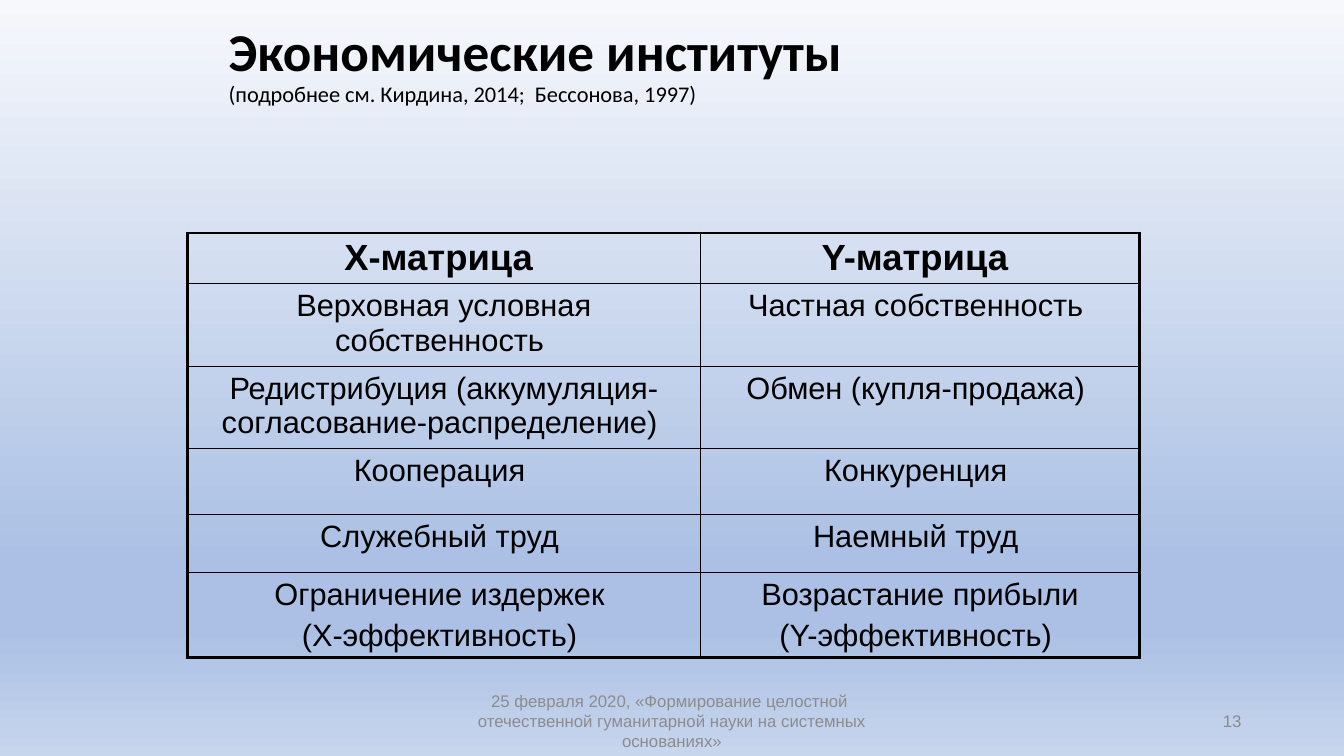
from lxml.etree import SubElement
from pptx import Presentation
from pptx.dml.color import RGBColor
from pptx.enum.text import MSO_ANCHOR, PP_ALIGN
from pptx.oxml.ns import qn
from pptx.util import Cm, Pt

COLORS = {"text": "000000", "footer": "8C8C8C", "line": "000000"}
BACKGROUND = [(0, "F6F8FC"), (74, "ABC0E4"), (83, "ABC0E4"), (100, "C7D5ED")]
THIN, THICK = Pt(1), Pt(2.25)

COLUMN_WIDTHS = [12.93, 11.07]
ROWS = [  # height in cm, left cell, right cell
    (1.26, "Х-матрица ", "Y-матрица "),
    (2.08, "Верховная условная собственность ", "Частная собственность "),
    (2.08, "Редистрибуция (аккумуляция-согласование-распределение) ",
     "Обмен (купля-продажа) "),
    (1.65, "Кооперация ", "Конкуренция "),
    (1.47, "Служебный труд ", "Наемный труд "),
    (2.08, "Ограничение издержек \n(Х-эффективность) ",
     "Возрастание прибыли\n(Y-эффективность) "),
]


def style_font(font, name, size, color, bold=False):
    font.name = name
    font.size = Pt(size)
    font.bold = bold
    font.color.rgb = RGBColor.from_string(COLORS[color])


def paint_background(s):
    fill = s.background.fill
    fill.gradient()
    fill.gradient_angle = 270
    stops = s._element.xpath(".//a:gsLst")[0]
    for old in list(stops):
        stops.remove(old)
    for percent, color in BACKGROUND:
        stop = SubElement(stops, qn("a:gs"), pos=str(percent * 1000))
        SubElement(stop, qn("a:srgbClr"), val=color)


def fill_title(s, left, top, width, height):
    title = s.shapes.title
    title.left, title.top, title.width, title.height = left, top, width, height
    tf = title.text_frame
    tf.vertical_anchor = MSO_ANCHOR.MIDDLE
    p = tf.paragraphs[0]
    p.alignment = PP_ALIGN.LEFT
    p.line_spacing = 0.9
    r = p.add_run()
    r.text = "Экономические институты"
    style_font(r.font, "Calibri", 38, "text", bold=True)
    p.add_line_break()
    r = p.add_run()
    r.text = "(подробнее см. Кирдина, 2014;  Бессонова, 1997)"
    style_font(r.font, "Calibri", 16, "text")


def set_borders(cell, **widths):
    """Draw solid borders; keys are the sides L, R, T and B."""
    tc_pr = cell._tc.get_or_add_tcPr()
    for side, width in widths.items():
        ln = SubElement(tc_pr, qn(f"a:ln{side}"), w=str(int(width)))
        color = SubElement(SubElement(ln, qn("a:solidFill")), qn("a:srgbClr"))
        color.set("val", COLORS["line"])


def add_matrix_table(s, left, top):
    last_row, last_col = len(ROWS) - 1, len(COLUMN_WIDTHS) - 1
    width = Cm(sum(COLUMN_WIDTHS))
    height = Cm(sum(row[0] for row in ROWS))
    table = s.shapes.add_table(len(ROWS), len(COLUMN_WIDTHS),
                               left, top, width, height).table
    table.first_row = table.horz_banding = False
    for column, column_width in zip(table.columns, COLUMN_WIDTHS):
        column.width = Cm(column_width)
    for i, (row_height, *texts) in enumerate(ROWS):
        table.rows[i].height = Cm(row_height)
        for j, text in enumerate(texts):
            cell = table.cell(i, j)
            set_borders(cell,
                        L=THICK if j == 0 else THIN,
                        R=THICK if j == last_col else THIN,
                        T=THICK if i == 0 else THIN,
                        B=THICK if i == last_row else THIN)
            cell.fill.background()
            cell.text = text
            for k, p in enumerate(cell.text_frame.paragraphs):
                p.alignment = PP_ALIGN.CENTER
                p.space_before = Pt(4.4 if k else 0)
                style_font(p.font, "Arial", 22 if i else 26, "text", bold=i == 0)


def add_footer_text(s, left, top, width, height, text, alignment):
    tf = s.shapes.add_textbox(left, top, width, height).text_frame
    tf.word_wrap = True
    tf.vertical_anchor = MSO_ANCHOR.MIDDLE
    p = tf.paragraphs[0]
    p.text = text
    p.alignment = alignment
    style_font(p.font, "Arial", 12, "footer")


def main():
    prs = Presentation()
    prs.slide_width, prs.slide_height = Cm(33.87), Cm(19.05)
    s = prs.slides.add_slide(prs.slide_layouts[5])
    paint_background(s)
    fill_title(s, Cm(5.51), Cm(0.33), Cm(20.96), Cm(2.69))
    add_matrix_table(s, Cm(4.72), Cm(5.87))
    add_footer_text(s, Cm(11.22), Cm(17.66), Cm(11.43), Cm(1.01),
                    "25 февраля 2020, «Формирование целостной  отечественной "
                    "гуманитарной науки на системных основаниях»",
                    PP_ALIGN.CENTER)
    add_footer_text(s, Cm(23.92), Cm(17.66), Cm(7.62), Cm(1.01),
                    "13", PP_ALIGN.RIGHT)
    prs.save("out.pptx")


if __name__ == "__main__":
    main()
